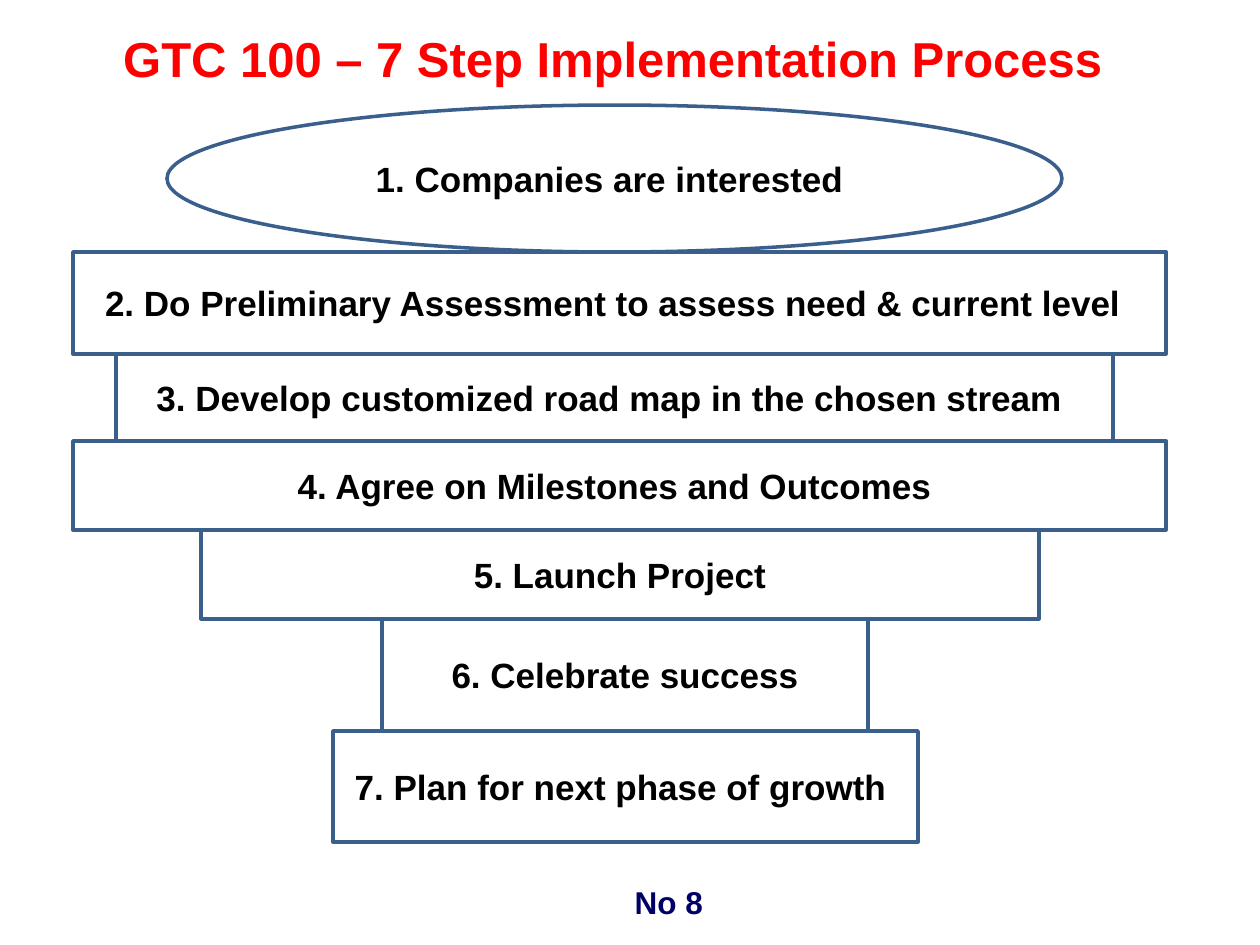
from pptx import Presentation
from pptx.dml.color import RGBColor
from pptx.enum.shapes import MSO_SHAPE
from pptx.enum.text import MSO_ANCHOR, PP_ALIGN
from pptx.util import Emu, Pt

# Content
TITLE = "GTC 100 – 7 Step Implementation Process "
FOOT = "No 8"
STEPS = [  # text, left, width, height in px
    ("1. Companies are interested ", 167, 895, 147),
    ("2. Do Preliminary Assessment to assess need & current level", 73, 1093, 102),
    ("3. Develop customized road map in the chosen stream ", 116, 997, 87),
    ("4. Agree on Milestones and Outcomes ", 73, 1093, 89),
    ("5. Launch Project", 201, 838, 89),
    ("6. Celebrate success", 382, 486, 112),
    ("7. Plan for next phase of growth ", 333, 585, 111),
]
TOP = 105
INDENT = 32  # left inset of the one left-aligned step
HEX = {"title": "FF0000", "foot": "000066", "text": "000000",
       "fill": "FFFFFF", "line": "3A5F8C"}


def px(n):
    return Emu(round(n * 914400 / 126))


def color(name):
    return RGBColor.from_string(HEX[name])


def write(shape, text, size, name, align, anchor, inset, wrap=True):
    frame = shape.text_frame
    frame.word_wrap = wrap
    frame.vertical_anchor = anchor
    (frame.margin_left, frame.margin_top,
     frame.margin_right, frame.margin_bottom) = map(px, inset)
    para = frame.paragraphs[0]
    para.alignment = align
    run = para.add_run()
    run.text = text
    font = run.font
    font.name, font.size, font.bold = "Arial", Pt(size), True
    font.color.rgb = color(name)


deck = Presentation()
deck.slide_width, deck.slide_height = px(1260), px(945)
slide = deck.slides.add_slide(deck.slide_layouts[5])

# Title
title = slide.shapes.title
title.left, title.top, title.width, title.height = map(px, (73, 23, 1093, 69))
write(title, TITLE, 28, "title", PP_ALIGN.CENTER, MSO_ANCHOR.TOP, (13, 5, 13, 5))

# Footer
foot = slide.shapes.add_textbox(*map(px, (591, 883, 112, 38)))
write(foot, FOOT, 18, "foot", PP_ALIGN.RIGHT, MSO_ANCHOR.TOP, (0, 0, 0, 0), False)

# Steps, stacked edge to edge
top = TOP
for i, (text, left, width, height) in enumerate(STEPS):
    kind = MSO_SHAPE.OVAL if i == 0 else MSO_SHAPE.RECTANGLE
    box = slide.shapes.add_shape(kind, *map(px, (left, top, width, height)))
    box.shadow.inherit = False
    box.fill.solid()
    box.fill.fore_color.rgb = color("fill")
    box.line.color.rgb = color("line")
    box.line.width = Pt(2)
    flush = i == 1
    write(box, text, 20, "text", PP_ALIGN.LEFT if flush else PP_ALIGN.CENTER,
          MSO_ANCHOR.MIDDLE, (INDENT if flush else 13, 6, 13, 6))
    top += height

deck.save("out.pptx")
